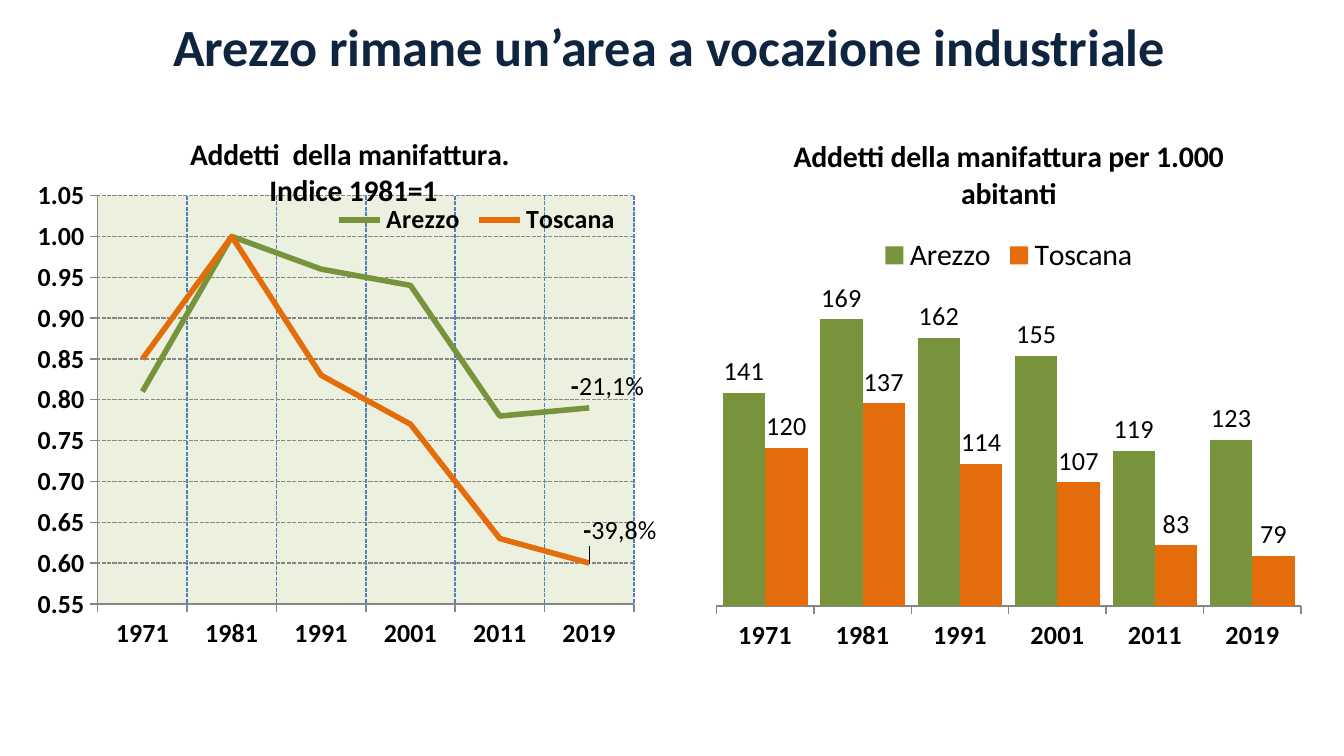
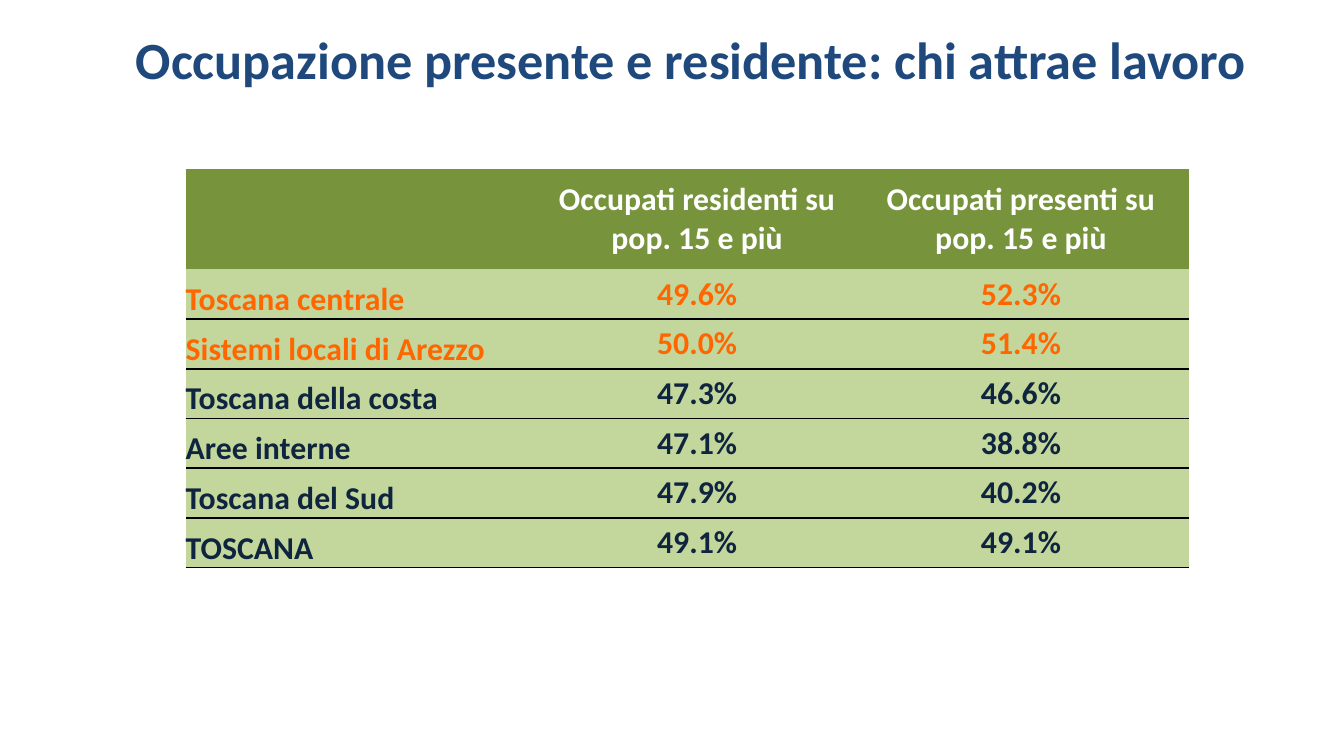
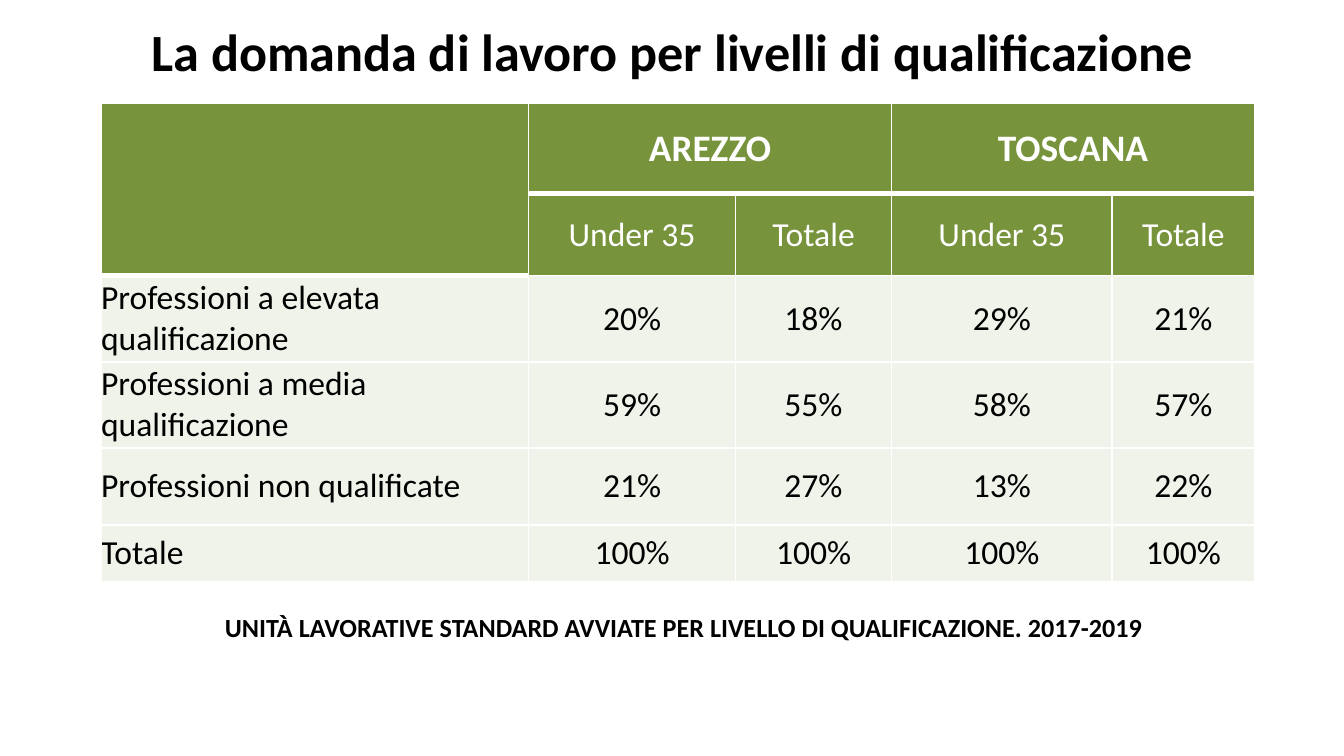
from lxml import etree
from pptx import Presentation
from pptx import util as u
from pptx.chart.data import CategoryChartData
from pptx.dml.color import RGBColor
from pptx.enum import chart as ch
from pptx.enum import dml, text
from pptx.oxml import ns

FONT = "Calibri"
COLORS = {
    "navy": "0F243E", "blue": "1F497D", "grid_blue": "4F81BD", "grey": "868686",
    "black": "000000", "white": "FFFFFF", "green": "77933C", "orange": "E46C0A",
    "highlight": "FF6600", "pale_green": "EBF1DE", "row_green": "C3D69B",
    "row_grey": "EFF3EA",
}
YEARS = ["1971", "1981", "1991", "2001", "2011", "2019"]
AREAS = {"Arezzo": "green", "Toscana": "orange"}
CENTER, LEFT = text.PP_ALIGN.CENTER, text.PP_ALIGN.LEFT
MIDDLE, BOTTOM = text.MSO_ANCHOR.MIDDLE, text.MSO_ANCHOR.BOTTOM


# Shared helpers
def rgb(name):
    return RGBColor.from_string(COLORS[name])


def cm_box(box):
    return [u.Cm(length) for length in box]


def style_font(font, size, color="black", bold=False):
    font.name, font.size, font.bold = FONT, u.Pt(size), bold
    font.color.rgb = rgb(color)


def write(frame, content, size, color="black", bold=False, align=CENTER, spacing=None):
    frame.text = content
    for paragraph in frame.paragraphs:
        paragraph.alignment = align
        if spacing:
            paragraph.line_spacing = spacing
        for run in paragraph.runs:
            style_font(run.font, size, color, bold)


def add_text(slide, box, content, size, color="black", anchor=MIDDLE, spacing=None):
    frame = slide.shapes.add_textbox(*cm_box(box)).text_frame
    frame.word_wrap = True
    frame.vertical_anchor = anchor
    write(frame, content, size, color, True, spacing=spacing)


def add_title(slide, box, content, color, spacing=None):
    add_text(slide, box, content, 28, color, spacing=spacing)


# Chart parts
def set_layout(parent, index, **values):
    for old in parent.findall(ns.qn("c:layout")):
        parent.remove(old)
    layout = etree.Element(ns.qn("c:layout"))
    manual = etree.SubElement(layout, ns.qn("c:manualLayout"))
    for tag, value in values.items():
        etree.SubElement(manual, ns.qn("c:" + tag), val=str(value))
    parent.insert(index, layout)


def fill_plot(plot_area, color):
    props = etree.SubElement(plot_area, ns.qn("c:spPr"))
    solid = etree.SubElement(props, ns.qn("a:solidFill"))
    etree.SubElement(solid, ns.qn("a:srgbClr"), val=COLORS[color])


def style_line(line, color, width, dash=None):
    line.color.rgb, line.width = rgb(color), u.Pt(width)
    if dash:
        line.dash_style = dash


def add_area_chart(slide, box, kind, title, values, number_format, size):
    data = CategoryChartData(number_format=number_format)
    data.categories = YEARS
    for area, numbers in zip(AREAS, values):
        data.add_series(area, numbers)
    chart = slide.shapes.add_chart(kind, *cm_box(box), data).chart
    style_font(chart.font, size)
    chart.has_title = True
    write(chart.chart_title.text_frame, title, 16, bold=True)
    chart.chart_title.include_in_layout = False
    chart.has_legend = True
    chart.legend.include_in_layout = False
    chart.plots[0].vary_by_categories = False
    years_axis = chart.category_axis
    years_axis.major_tick_mark = ch.XL_TICK_MARK.OUTSIDE
    style_font(years_axis.tick_labels.font, 14, bold=True)
    style_line(years_axis.format.line, "grey", 0.75)
    return chart


def add_index_chart(slide, box):
    chart = add_area_chart(
        slide, box, ch.XL_CHART_TYPE.LINE, "Addetti  della manifattura. \nIndice 1981=1",
        [(0.81, 1, 0.96, 0.94, 0.78, 0.79), (0.85, 1, 0.83, 0.77, 0.63, 0.6)], "0.00", 14)

    # Plot area and legend inside it
    plot_area = chart.plots[0]._element.getparent()
    set_layout(plot_area, 0, layoutTarget="inner", xMode="edge", yMode="edge",
               x=0.087, y=0.151, w=0.867, h=0.743)
    fill_plot(plot_area, "pale_green")
    chart.legend.position = ch.XL_LEGEND_POSITION.RIGHT
    style_font(chart.legend.font, 14, bold=True)
    set_layout(chart.legend._element, 1, xMode="edge", yMode="edge",
               x=0.46, y=0.16, w=0.48, h=0.07)

    # Axes and dashed grid
    dash = dml.MSO_LINE.SQUARE_DOT
    index_axis, years_axis = chart.value_axis, chart.category_axis
    index_axis.minimum_scale, index_axis.maximum_scale = 0.55, 1.05
    index_axis.major_unit = 0.05
    index_axis.major_tick_mark = ch.XL_TICK_MARK.OUTSIDE
    index_axis.tick_labels.number_format = "0.00"
    index_axis.tick_labels.number_format_is_linked = False
    style_font(index_axis.tick_labels.font, 14, bold=True)
    style_line(index_axis.format.line, "grey", 0.75)
    years_axis.has_major_gridlines = True
    style_line(index_axis.major_gridlines.format.line, "grey", 0.75, dash)
    style_line(years_axis.major_gridlines.format.line, "grid_blue", 0.75, dash)

    # Lines with the change at the last year
    changes = [("21,1%", 0.03, 0), ("39,8%", 0.05, -0.02)]
    for series, color, (change, dx, dy) in zip(chart.series, AREAS.values(), changes):
        style_line(series.format.line, color, 3)
        series.marker.style = ch.XL_MARKER_STYLE.NONE
        series.smooth = False
        label = series.points[len(YEARS) - 1].data_label
        paragraph = label.text_frame.paragraphs[0]
        for part, bold in (("-", True), (change, False)):
            run = paragraph.add_run()
            run.text = part
            style_font(run.font, 14, bold=bold)
        label.position = ch.XL_LABEL_POSITION.ABOVE
        series.data_labels.show_value = False
        set_layout(series._element.xpath("c:dLbls/c:dLbl")[0], 1, x=dx, y=dy)


def add_density_chart(slide, box):
    chart = add_area_chart(
        slide, box, ch.XL_CHART_TYPE.COLUMN_CLUSTERED,
        "Addetti della manifattura per 1.000 abitanti",
        [(141, 169, 162, 155, 119, 123), (120, 137, 114, 107, 83, 79)], "#,##0", 12)
    chart.legend.position = ch.XL_LEGEND_POSITION.TOP
    style_font(chart.legend.font, 16)
    chart.value_axis.visible = False
    chart.value_axis.has_major_gridlines = False
    chart.value_axis.minimum_scale = 60
    chart.plots[0].gap_width = 30
    chart.plots[0].overlap = 0
    for series, color in zip(chart.series, AREAS.values()):
        series.format.fill.solid()
        series.format.fill.fore_color.rgb = rgb(color)
        series.invert_if_negative = False
        labels = series.data_labels
        labels.show_value = True
        labels.number_format, labels.number_format_is_linked = "#,##0", False
        labels.position = ch.XL_LABEL_POSITION.OUTSIDE_END
        style_font(labels.font, 14)


# Table parts
def add_grid(slide, box, widths, heights):
    table = slide.shapes.add_table(len(heights), len(widths), *cm_box(box)).table
    for column, width in zip(table.columns, widths):
        column.width = u.Cm(width)
    for row, height in zip(table.rows, heights):
        row.height = u.Cm(height)
    return table


def set_borders(cell, color, **widths):
    """Widths in points by side (L, R, T, B); zero leaves the side without a line."""
    props = cell._tc.get_or_add_tcPr()
    for side in "LRTB":
        width = widths.get(side, 0)
        line = etree.SubElement(props, ns.qn("a:ln" + side), w=str(u.Pt(width)))
        if width:
            solid = etree.SubElement(line, ns.qn("a:solidFill"))
            etree.SubElement(solid, ns.qn("a:srgbClr"), val=COLORS[color])
        else:
            etree.SubElement(line, ns.qn("a:noFill"))


def fill_cell(cell, color, opacity=None):
    cell.fill.solid()
    cell.fill.fore_color.rgb = rgb(color)
    if opacity:
        tint = cell._tc.tcPr.find(".//" + ns.qn("a:srgbClr"))
        etree.SubElement(tint, ns.qn("a:alpha"), val=str(opacity * 1000))


def write_cell(cell, content, size, color, bold, align=CENTER, anchor=MIDDLE):
    cell.margin_left = cell.margin_right = cell.margin_top = cell.margin_bottom = 0
    cell.vertical_anchor = anchor
    write(cell.text_frame, content, size, color, bold, align)


def add_employment_table(slide, box):
    rows = [
        ("", "Occupati residenti su pop. 15 e più", "Occupati presenti su\npop. 15 e più"),
        ("Toscana centrale", "49.6%", "52.3%"),
        ("Sistemi locali di Arezzo", "50.0%", "51.4%"),
        ("Toscana della costa", "47.3%", "46.6%"),
        ("Aree interne", "47.1%", "38.8%"),
        ("Toscana del Sud", "47.9%", "40.2%"),
        ("TOSCANA", "49.1%", "49.1%"),
    ]
    table = add_grid(slide, box, [6.73, 5.87, 6.37], [1.89] + [0.94] * 6)
    for r, row in enumerate(rows):
        color = "white" if r == 0 else "highlight" if r < 3 else "navy"
        for c, content in enumerate(row):
            cell = table.cell(r, c)
            is_area = r > 0 and c == 0
            write_cell(cell, content, 17, color, True,
                       LEFT if is_area else CENTER, BOTTOM if is_area else MIDDLE)
            set_borders(cell, "black", T=int(r > 1), B=int(r > 0))
            if r == 0:
                fill_cell(cell, "green")
            else:
                fill_cell(cell, "row_green", 20)


def add_qualification_table(slide, box):
    rows = [
        ("", "AREZZO", "", "TOSCANA", ""),
        ("", "Under 35", "Totale", "Under 35", "Totale"),
        ("Professioni a elevata qualificazione", "20%", "18%", "29%", "21%"),
        ("Professioni a media qualificazione", "59%", "55%", "58%", "57%"),
        ("Professioni non qualificate", "21%", "27%", "13%", "22%"),
        ("Totale", "100%", "100%", "100%", "100%"),
    ]
    table = add_grid(slide, box, [8.08, 3.91, 2.95, 4.17, 2.69],
                     [1.7, 1.55, 1.63, 1.63, 1.45, 1.07])
    for r, row in enumerate(rows):
        for c, content in enumerate(row):
            cell = table.cell(r, c)
            in_header = r < 2
            write_cell(cell, content, 20 if r == 0 else 18,
                       "white" if in_header else "black", r == 0, CENTER if c else LEFT)
            # Thick rule under the first header cell of each column
            thick_row = 0 if c else 1
            set_borders(cell, "white", L=1, R=1, T=3 if r == thick_row + 1 else 1,
                        B=3 if r == thick_row else 1)
            fill_cell(cell, "green" if in_header else "row_grey")
    for first, last in (((0, 0), (1, 0)), ((0, 1), (0, 2)), ((0, 3), (0, 4))):
        table.cell(*first).merge(table.cell(*last))


# Slides
def build_industry(slide):
    add_title(slide, (0.3, 0.15, 24.69, 1.6),
              "Arezzo rimane un’area a vocazione industriale", "navy", 0.85)
    add_index_chart(slide, (0.71, 2.13, 11.81, 10.39))
    add_density_chart(slide, (13.31, 2.13, 11.51, 10.39))


def build_employment(slide):
    add_title(slide, (0.71, 0.25, 24.69, 1.9),
              "Occupazione presente e residente: chi attrae lavoro", "blue", 0.85)
    add_employment_table(slide, (3.51, 3.2, 18.97, 7.54))


def build_qualification(slide):
    add_title(slide, (0, 0.15, 25.4, 1.6),
              "La domanda di lavoro per livelli di qualificazione", "black")
    add_text(slide, (1.5, 11.35, 22.86, 1.19),
             "UNITÀ LAVORATIVE STANDARD AVVIATE PER LIVELLO DI QUALIFICAZIONE. 2017-2019",
             14, anchor=text.MSO_ANCHOR.TOP, spacing=1.15)
    add_qualification_table(slide, (1.91, 1.96, 21.8, 9.03))


def main():
    deck = Presentation()
    deck.slide_width, deck.slide_height = u.Cm(25.4), u.Cm(14.29)
    for build in (build_industry, build_employment, build_qualification):
        build(deck.slides.add_slide(deck.slide_layouts[6]))
    deck.save("out.pptx")


if __name__ == "__main__":
    main()
